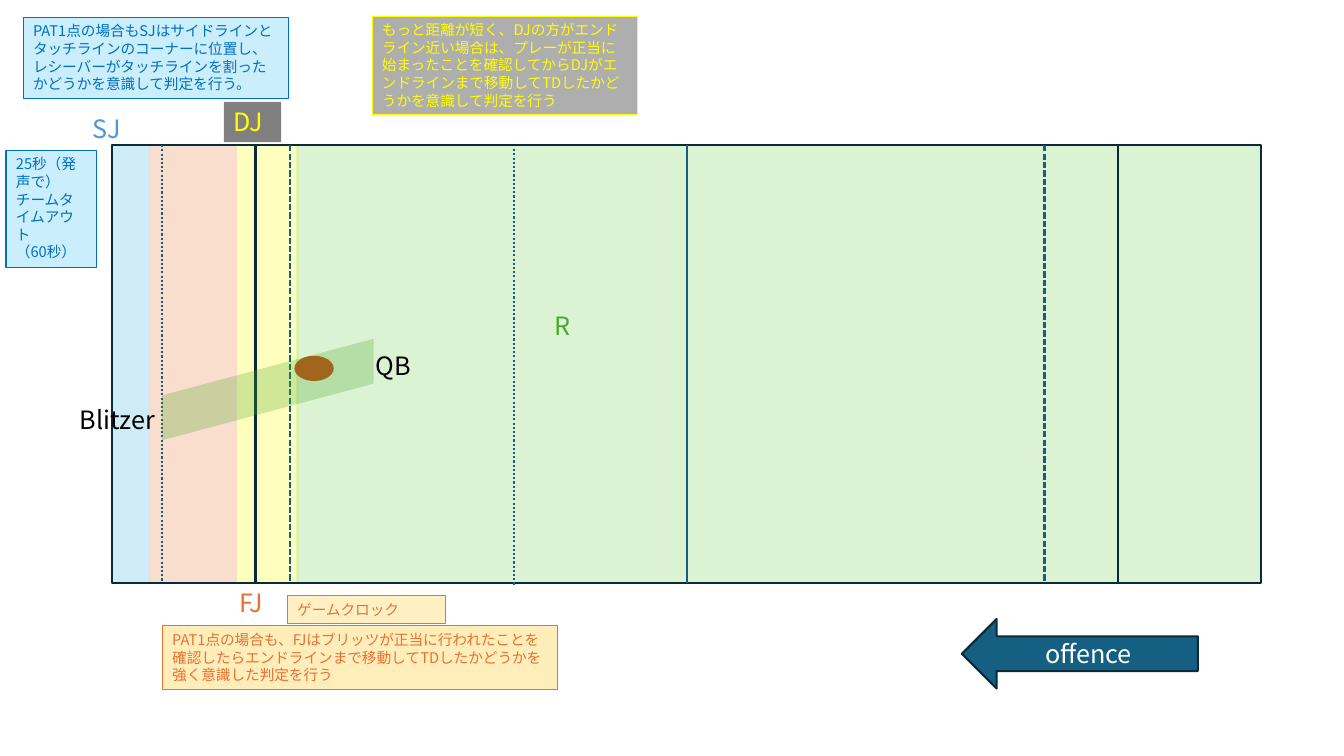
from lxml import etree
from pptx import Presentation
from pptx.dml.color import RGBColor
from pptx.enum.dml import MSO_LINE_DASH_STYLE as Dash
from pptx.enum.shapes import MSO_CONNECTOR, MSO_SHAPE as Shape
from pptx.enum.text import MSO_ANCHOR, MSO_AUTO_SIZE, PP_ALIGN
from pptx.oxml.ns import qn
from pptx.util import Inches, Pt

FONT = "Noto Sans CJK JP"
WHITE = RGBColor(0xFF, 0xFF, 0xFF)
BLACK = RGBColor(0x00, 0x00, 0x00)
NAVY = RGBColor(0x09, 0x2A, 0x39)
TEAL = RGBColor(0x15, 0x60, 0x82)
SKY = RGBColor(0x0F, 0x9E, 0xD5)
PALE_BLUE = RGBColor(0xCA, 0xEE, 0xFB)
BLUE = RGBColor(0x00, 0x70, 0xC0)
SOFT_BLUE = RGBColor(0x4E, 0x95, 0xD9)
YELLOW = RGBColor(0xFF, 0xFF, 0x00)
GOLD = RGBColor(0xFF, 0xC0, 0x00)
ORANGE = RGBColor(0xE9, 0x71, 0x32)
BROWN = RGBColor(0xC0, 0x4F, 0x15)
LIGHT_GREEN = RGBColor(0x8E, 0xD9, 0x73)
GREEN = RGBColor(0x4E, 0xA7, 0x2E)
GRAY = RGBColor(0x80, 0x80, 0x80)
LIGHT_GRAY = RGBColor(0xAE, 0xAE, 0xAE)

FIELD_LEFT, FIELD_TOP, FIELD_WIDTH, FIELD_HEIGHT = 1.11, 1.44, 11.4, 4.34
FIELD_RIGHT = FIELD_LEFT + FIELD_WIDTH
LABEL_WIDTH, LABEL_HEIGHT = 1.25, 0.4

presentation = Presentation()
presentation.slide_width = Inches(13.33)
presentation.slide_height = Inches(7.5)
slide = presentation.slides.add_slide(presentation.slide_layouts[6])


def add_shape(kind, box, fill=None, opacity=100, line=None, line_width=1.5):
    shape = slide.shapes.add_shape(kind, *(Inches(length) for length in box))
    shape.shadow.inherit = False
    if fill is None:
        shape.fill.background()
    else:
        shape.fill.solid()
        shape.fill.fore_color.rgb = fill
    if opacity < 100:
        color = shape.fill._xPr.find(qn("a:solidFill"))[0]
        etree.SubElement(color, qn("a:alpha")).set("val", str(opacity * 1000))
    if line is None:
        shape.line.fill.background()
    else:
        shape.line.color.rgb = line
        shape.line.width = Pt(line_width)
    return shape


def write(shape, text, size, color, align=PP_ALIGN.LEFT, anchor=MSO_ANCHOR.TOP):
    frame = shape.text_frame
    frame.text = text
    frame.word_wrap = True
    frame.vertical_anchor = anchor
    for paragraph in frame.paragraphs:
        paragraph.alignment = align
        for run in paragraph.runs:
            run.font.name = FONT
            run.font.size = Pt(size)
            run.font.color.rgb = color
            east_asian = etree.SubElement(run.font._element, qn("a:ea"))
            east_asian.set("typeface", FONT)


for left, right, color, opacity in [
    (FIELD_LEFT, 1.48, SKY, 20),
    (2.35, 2.96, YELLOW, 26),
    (2.94, FIELD_RIGHT, LIGHT_GREEN, 31),
    (1.48, 2.35, ORANGE, 24),
]:
    add_shape(Shape.RECTANGLE, (left, FIELD_TOP, right - left, FIELD_HEIGHT), color, opacity)

add_shape(Shape.FLOWCHART_PREDEFINED_PROCESS,
          (FIELD_LEFT, FIELD_TOP, FIELD_WIDTH, FIELD_HEIGHT), line=NAVY)

for x, top, dash in [
    (FIELD_LEFT + FIELD_WIDTH / 2, FIELD_TOP, Dash.SOLID),
    (2.88, FIELD_TOP, Dash.SQUARE_DOT),
    (10.36, FIELD_TOP, Dash.SQUARE_DOT),
    (1.61, FIELD_TOP, Dash.ROUND_DOT),
    (5.1, 1.48, Dash.ROUND_DOT),
]:
    yard_line = slide.shapes.add_connector(
        MSO_CONNECTOR.STRAIGHT, Inches(x), Inches(top), Inches(x), Inches(top + FIELD_HEIGHT))
    yard_line.line.color.rgb = TEAL
    yard_line.line.width = Pt(1.5)
    yard_line.line.dash_style = dash
    etree.SubElement(yard_line._element.spPr, qn("a:effectLst"))

add_shape(Shape.OVAL, (2.92, 3.53, 0.39, 0.25), BROWN)
blitz_path = add_shape(Shape.PARALLELOGRAM, (1.51, 3.65, 2.29, 0.43), GREEN, 27)
blitz_path.adjustments[0] = 0.27
blitz_path.rotation = 345

offence_arrow = add_shape(Shape.LEFT_ARROW, (9.54, 6.14, 2.34, 0.69), TEAL, line=NAVY)
write(offence_arrow, "offence", 18, WHITE, PP_ALIGN.CENTER, MSO_ANCHOR.MIDDLE)

for text, left, top, color in [
    ("Blitzer", 0.69, 3.96, BLACK),
    ("R", 5.4, 3.03, GREEN),
    ("SJ", 0.82, 1.08, SOFT_BLUE),
    ("FJ", 2.28, 5.78, ORANGE),
    ("QB", 3.63, 3.43, BLACK),
]:
    label = slide.shapes.add_textbox(
        Inches(left), Inches(top), Inches(LABEL_WIDTH), Inches(LABEL_HEIGHT))
    write(label, text, 18, color)
    label.text_frame.auto_size = MSO_AUTO_SIZE.SHAPE_TO_FIT_TEXT

for text, box, size, color, fill, opacity, line in [
    ("DJ", (2.22, 1.01, 0.57, LABEL_HEIGHT), 18, YELLOW, GRAY, 100, None),
    ("もっと距離が短く、DJの方がエンドライン近い場合は、プレーが正当に始まったことを確認してから"
     "DJがエンドラインまで移動してTDしたかどうかを意識して判定を行う",
     (3.69, 0.16, 2.63, 0.98), 10.5, YELLOW, LIGHT_GRAY, 100, YELLOW),
    ("ゲームクロック", (2.85, 5.91, 1.57, 0.28), 10.5, ORANGE, GOLD, 23, ORANGE),
    ("25秒（発声で）\nチームタイムアウト\n（60秒）",
     (0.06, 1.49, 0.9, 1.16), 10.5, BLUE, PALE_BLUE, 100, BLUE),
    ("PAT1点の場合も、FJはブリッツが正当に行われたことを確認したら"
     "エンドラインまで移動してTDしたかどうかを強く意識した判定を行う",
     (1.61, 6.21, 3.92, 0.63), 10.5, ORANGE, GOLD, 27, ORANGE),
    ("PAT1点の場合もSJはサイドラインとタッチラインのコーナーに位置し、"
     "レシーバーがタッチラインを割ったかどうかを意識して判定を行う。",
     (0.23, 0.17, 2.63, 0.81), 10.5, BLUE, PALE_BLUE, 100, BLUE),
]:
    note = add_shape(Shape.RECTANGLE, box, fill, opacity, line, 0.75)
    write(note, text, size, color)
    note.text_frame.auto_size = MSO_AUTO_SIZE.SHAPE_TO_FIT_TEXT

presentation.save("out.pptx")
